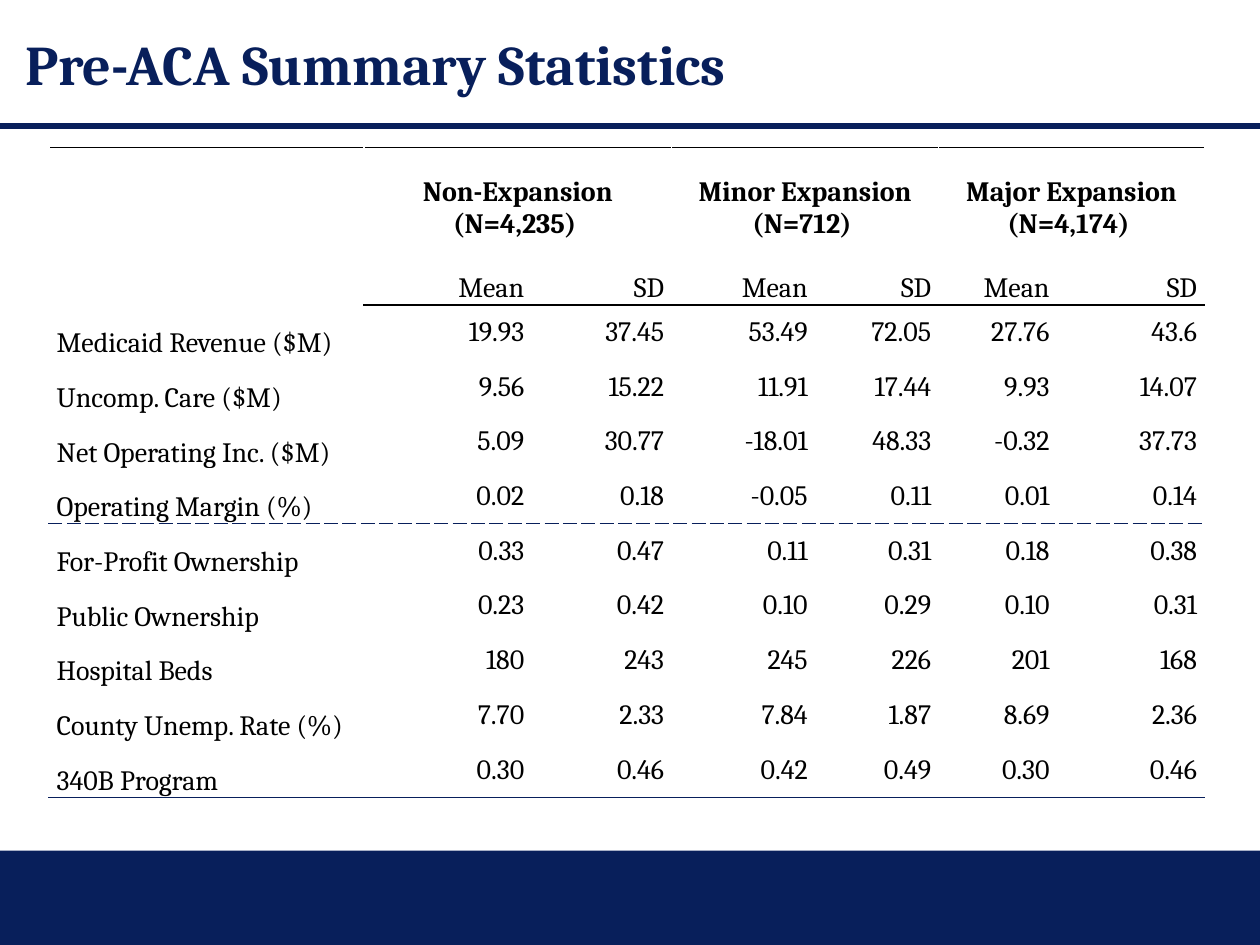
import pptx
import pptx.dml.color
import pptx.enum.shapes
import pptx.enum.text
import pptx.oxml
import pptx.oxml.ns
import pptx.util
from pptx.util import Inches

NAVY = pptx.dml.color.RGBColor(0x08, 0x1F, 0x5B)
BLACK = pptx.dml.color.RGBColor(0, 0, 0)
WHITE = pptx.dml.color.RGBColor(0xFF, 0xFF, 0xFF)
FONT = "Cambria"
ALIGN = pptx.enum.text.PP_ALIGN
ANCHOR = pptx.enum.text.MSO_ANCHOR

GROUPS = ["Non-Expansion (N=4,235)\u00a0", "Minor Expansion (N=712)\u00a0", "Major Expansion (N=4,174)\u00a0"]
STATISTICS = [
    ("Medicaid Revenue ($M)", "19.93", "37.45", "53.49", "72.05", "27.76", "43.6"),
    ("Uncomp. Care ($M)", "9.56", "15.22", "11.91", "17.44", "9.93", "14.07"),
    ("Net Operating Inc. ($M)", "5.09", "30.77", "-18.01", "48.33", "-0.32", "37.73"),
    ("Operating Margin (%)", "0.02", "0.18", "-0.05", "0.11", "0.01", "0.14"),
    ("For-Profit Ownership", "0.33", "0.47", "0.11", "0.31", "0.18", "0.38"),
    ("Public Ownership", "0.23", "0.42", "0.10", "0.29", "0.10", "0.31"),
    ("Hospital Beds", "180", "243", "245", "226", "201", "168"),
    ("County Unemp. Rate (%)", "7.70", "2.33", "7.84", "1.87", "8.69", "2.36"),
    ("340B Program", "0.30", "0.46", "0.42", "0.49", "0.30", "0.46"),
]
COLUMN_WIDTHS = [2.5, 1.33, 1.11, 1.14, 0.98, 0.94, 1.17]
ROW_HEIGHTS = [0.74, 0.51] + [3.91 / len(STATISTICS)] * len(STATISTICS)
RULES = {
    0: ("lnT", BLACK, "solid"),
    1: ("lnB", BLACK, "solid"),
    2: ("lnT", BLACK, "solid"),
    5: ("lnB", NAVY, "sysDash"),
    6: ("lnT", NAVY, "sysDash"),
    10: ("lnB", NAVY, "solid"),
}


def style_font(para, size, color, bold=False):
    """Set the font of a whole paragraph."""
    font = para.font
    font.name, font.size, font.bold = FONT, pptx.util.Pt(size), bold
    font.color.rgb = color


def add_footer_band(page):
    """Add the navy band along the bottom edge."""
    band = page.shapes.add_shape(
        pptx.enum.shapes.MSO_SHAPE.RECTANGLE, 0, Inches(6.75), Inches(10), Inches(0.75))
    band.shadow.inherit = False
    band.fill.solid()
    band.fill.fore_color.rgb = NAVY
    band.line.fill.background()


def add_title_rule(page):
    """Add the navy line under the title."""
    rule = page.shapes.add_connector(
        pptx.enum.shapes.MSO_CONNECTOR.STRAIGHT, 0, Inches(1), Inches(10), Inches(1))
    rule.line.color.rgb = NAVY
    rule.line.width = pptx.util.Pt(3)
    rule._element.spPr.append(pptx.oxml.parse_xml(f'<a:effectLst {pptx.oxml.ns.nsdecls("a")}/>'))


def add_title(page, text):
    """Add the slide title."""
    box = page.shapes.add_textbox(Inches(0.1), 0, Inches(9.75), Inches(1))
    box.text_frame.word_wrap = True
    box.text_frame.vertical_anchor = ANCHOR.MIDDLE
    para = box.text_frame.paragraphs[0]
    para.text = text
    style_font(para, 32, NAVY, bold=True)


def add_border(cell, side, color, dash):
    """Draw a one-point border on one side of a cell."""
    cell._tc.get_or_add_tcPr().append(pptx.oxml.parse_xml(
        f'<a:{side} {pptx.oxml.ns.nsdecls("a")} w="12700"><a:solidFill>'
        f'<a:srgbClr val="{color}"/></a:solidFill><a:prstDash val="{dash}"/></a:{side}>'))


def fill_cell(cell, text, row, column):
    """Write and style one table cell by its position."""
    cell.margin_left = cell.margin_right = Inches(0.06)
    cell.margin_top = cell.margin_bottom = 0
    is_value = row > 1 and column > 0
    cell.vertical_anchor = ANCHOR.MIDDLE if is_value else ANCHOR.BOTTOM
    if row in RULES and (column > 0 or row not in (1, 2)):
        add_border(cell, *RULES[row])
    cell.fill.solid()
    cell.fill.fore_color.rgb = WHITE
    para = cell.text_frame.paragraphs[0]
    para.text = text
    if column == 0:
        para.alignment = ALIGN.LEFT
    else:
        para.alignment = ALIGN.CENTER if row == 0 else ALIGN.RIGHT
    style_font(para, 16, BLACK, bold=row == 0)


def add_statistics_table(page):
    """Add the table of means and standard deviations by group."""
    group_row = [""]
    for group in GROUPS:
        group_row += [group, ""]
    rows = [group_row, [""] + ["Mean", "SD"] * len(GROUPS), *STATISTICS]
    table = page.shapes.add_table(
        len(rows), len(COLUMN_WIDTHS), Inches(0.39), Inches(1.17),
        Inches(sum(COLUMN_WIDTHS)), Inches(sum(ROW_HEIGHTS))).table
    table.first_row = table.horz_banding = False
    for column, width in zip(table.columns, COLUMN_WIDTHS):
        column.width = Inches(width)
    for row, height in zip(table.rows, ROW_HEIGHTS):
        row.height = Inches(height)
    for row, texts in enumerate(rows):
        for column, text in enumerate(texts):
            fill_cell(table.cell(row, column), text, row, column)
    for column in range(1, len(COLUMN_WIDTHS), 2):
        table.cell(0, column).merge(table.cell(0, column + 1))


def main():
    """Build the slide and save it."""
    deck = pptx.Presentation()
    deck.slide_width, deck.slide_height = Inches(10), Inches(7.5)
    page = deck.slides.add_slide(deck.slide_layouts[6])
    add_footer_band(page)
    add_title_rule(page)
    add_title(page, "Pre-ACA Summary Statistics")
    add_statistics_table(page)
    deck.save("out.pptx")


if __name__ == "__main__":
    main()
